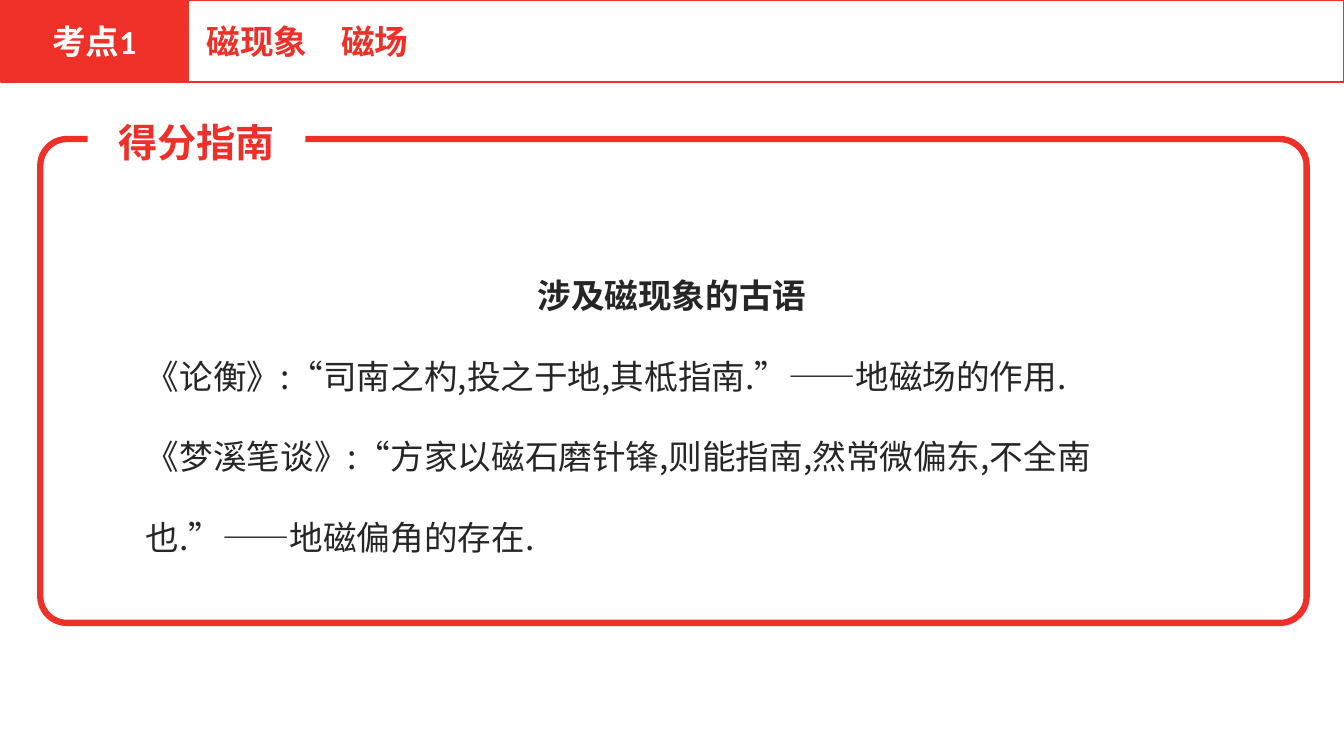
from dataclasses import dataclass

from lxml import etree
from pptx import Presentation
from pptx.dml.color import RGBColor
from pptx.enum.shapes import MSO_SHAPE
from pptx.enum.text import MSO_ANCHOR, MSO_AUTO_SIZE, PP_ALIGN
from pptx.oxml.ns import qn
from pptx.util import Inches, Pt

LEFT, CENTER = PP_ALIGN.LEFT, PP_ALIGN.CENTER
MIDDLE = MSO_ANCHOR.MIDDLE
FIT_SHAPE, NO_FIT = MSO_AUTO_SIZE.SHAPE_TO_FIT_TEXT, MSO_AUTO_SIZE.NONE


@dataclass(frozen=True)
class Theme:
    red: RGBColor = RGBColor(0xEE, 0x30, 0x28)
    white: RGBColor = RGBColor(0xFF, 0xFF, 0xFF)
    ink: RGBColor = RGBColor(0x26, 0x26, 0x26)
    body_size: Pt = Pt(24)
    label_size: Pt = Pt(28)
    rule: Pt = Pt(1.5)
    frame_rule: Pt = Pt(4.5)
    header_font: str = "Calibri"
    heading_font: str = "Arial"
    chinese_font: str = "Noto Sans CJK SC"


theme = Theme()


def add_span(para, text, font, size, color, bold=True):
    """Add a run whose Chinese characters use the theme's Chinese font."""
    span = para.add_run()
    span.text = text
    span.font.name = font
    span.font.size = size
    span.font.bold = bold
    span.font.color.rgb = color
    properties = span.font._element
    properties.set("lang", "zh-CN")
    etree.SubElement(properties, qn("a:ea"), typeface=theme.chinese_font)


def add_panel(kind, left, top, width, height, fill=None, rule=None):
    """Add a shape without shadow; a missing fill or rule leaves that part clear."""
    panel = page.shapes.add_shape(
        kind, Inches(left), Inches(top), Inches(width), Inches(height))
    panel.shadow.inherit = False
    if fill is None:
        panel.fill.background()
    else:
        panel.fill.solid()
        panel.fill.fore_color.rgb = fill
    if rule is None:
        panel.line.fill.background()
    else:
        panel.line.color.rgb = theme.red
        panel.line.width = rule
    return panel


deck = Presentation()
deck.slide_width, deck.slide_height = Inches(13.33), Inches(7.5)
page = deck.slides.add_slide(deck.slide_layouts[5])

# Header: topic title and numbered tab
title = page.shapes.title
title.left, title.top = Inches(1.85), Inches(0)
title.width, title.height = Inches(11.48), Inches(0.81)
title.line.color.rgb = theme.red
title.line.width = theme.rule
box = title.text_frame
box.auto_size = NO_FIT
box.vertical_anchor = MIDDLE
box.margin_left = Inches(0.2)
para = box.paragraphs[0]
para.alignment = LEFT
add_span(para, "磁现象　磁场", theme.header_font, theme.body_size, theme.red)

tab = add_panel(MSO_SHAPE.RECTANGLE, 0.01, 0, 1.85, 0.81, theme.red, theme.rule)
box = tab.text_frame
box.word_wrap = False
box.vertical_anchor = MIDDLE
box.margin_left = box.margin_right = box.margin_top = box.margin_bottom = 0
para = box.paragraphs[0]
para.alignment = CENTER
add_span(para, "考点1", theme.header_font, theme.body_size, theme.white)

# Guide frame and its text
frame = add_panel(MSO_SHAPE.ROUNDED_RECTANGLE, 0.4, 1.38, 12.56, 4.8,
                  rule=theme.frame_rule)
frame.adjustments[0] = 0.055

sayings = page.shapes.add_textbox(
    Inches(1.35), Inches(2.28), Inches(10.63), Inches(3.33))
box = sayings.text_frame
box.word_wrap = True
box.auto_size = FIT_SHAPE
para = box.paragraphs[0]
para.alignment = CENTER
para.line_spacing = 2.0
add_span(para, "涉及磁现象的古语", theme.heading_font, theme.body_size, theme.ink)
for saying in (
    "《论衡》:“司南之杓,投之于地,其柢指南.”——地磁场的作用.",
    "《梦溪笔谈》:“方家以磁石磨针锋,则能指南,然常微偏东,不全南也.”——地磁偏角的存在.",
):
    para = box.add_paragraph()
    para.line_spacing = 2.0
    add_span(para, saying, theme.chinese_font, theme.body_size, theme.ink, bold=False)

# Label that interrupts the top edge of the frame
label = add_panel(MSO_SHAPE.RECTANGLE, 0.87, 0.89, 2.16, 0.81, theme.white)
box = label.text_frame
box.word_wrap = True
box.auto_size = FIT_SHAPE
box.vertical_anchor = MSO_ANCHOR.TOP
para = box.paragraphs[0]
para.alignment = CENTER
para.line_spacing = 1.5
add_span(para, "得分指南", theme.chinese_font, theme.label_size, theme.red)

deck.save("out.pptx")
